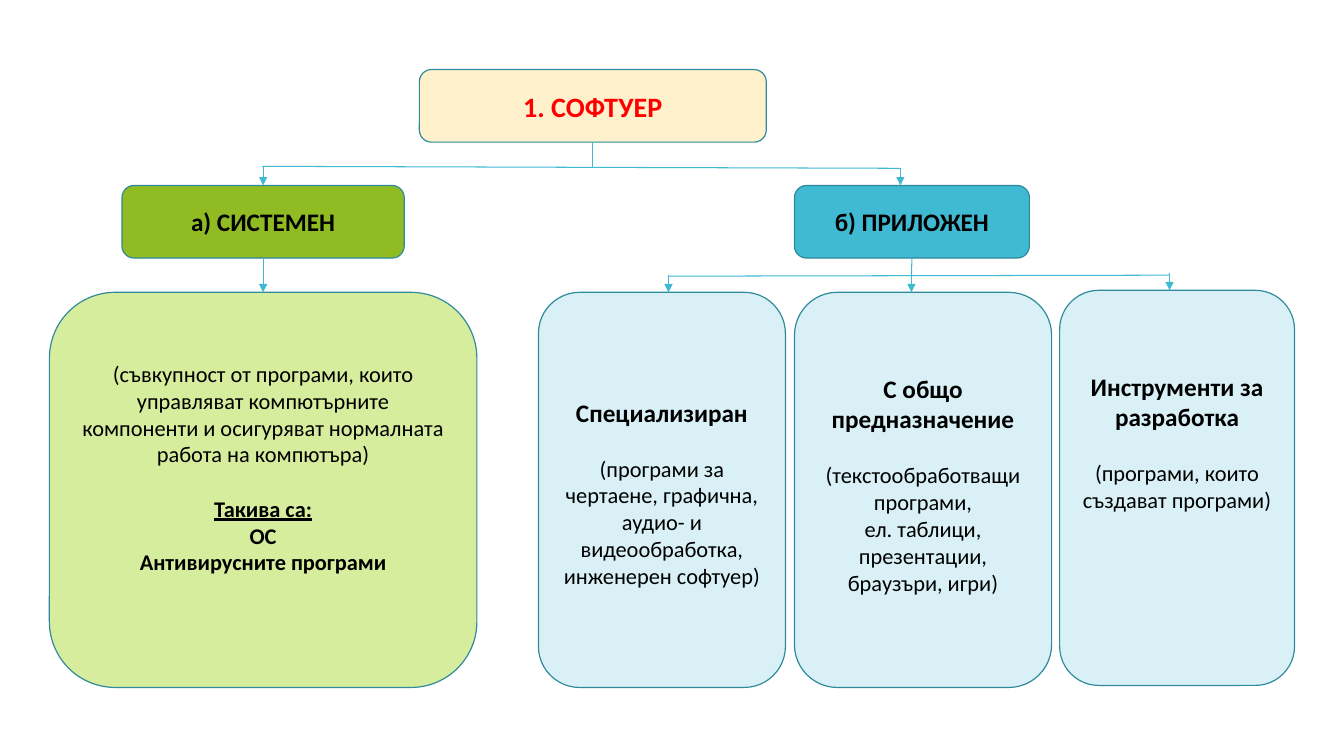
from lxml import etree
from pptx import Presentation
from pptx.dml.color import RGBColor
from pptx.enum.shapes import MSO_CONNECTOR as Line, MSO_SHAPE as Shape
from pptx.enum.text import MSO_ANCHOR as Anchor, PP_ALIGN as Align
from pptx.oxml.ns import qn
from pptx.util import Inches, Pt

FONT = "Calibri"
OUTLINE, ARROW, BLACK, RED = "2F8A9B", "40BAD2", "000000", "FF0000"
TOP, BOTTOM = 0, 2  # connection sites
BLANK_LINE = 19.5   # gap between paragraphs, points


def rgb(hex_color):
    return RGBColor.from_string(hex_color)


def add_box(slide, left, top, width, height, fill):
    box = slide.shapes.add_shape(Shape.ROUNDED_RECTANGLE, Inches(left), Inches(top),
                                 Inches(width), Inches(height))
    box.shadow.inherit = False
    box.fill.solid()
    box.fill.fore_color.rgb = rgb(fill)
    box.line.color.rgb = rgb(OUTLINE)
    box.line.width = Pt(0.85)
    box.text_frame.word_wrap = True
    return box


def write(paragraph, text, size, bold=False, color=BLACK, underline=False, gap=0):
    paragraph.text = text
    paragraph.alignment = Align.CENTER
    if gap:
        paragraph.space_before = Pt(gap)
    font = paragraph.font
    font.name, font.size, font.bold = FONT, Pt(size), bold
    font.color.rgb = rgb(color)
    if underline:
        font.underline = True


def add_heading(slide, left, top, width, fill, text, size=18, color=BLACK):
    heading = add_box(slide, left, top, width, 0.72, fill)
    heading.text_frame.vertical_anchor = Anchor.MIDDLE
    write(heading.text_frame.paragraphs[0], text, size, True, color)
    return heading


def add_panel(slide, left, top, width, fill, inset, lines):
    """A tall box whose text starts at the given inset from the top."""
    panel = add_box(slide, left, top, width, 3.92, fill)
    frame = panel.text_frame
    frame.vertical_anchor = Anchor.TOP
    frame.margin_top = Inches(inset)
    for i, (text, style) in enumerate(lines):
        paragraph = frame.add_paragraph() if i else frame.paragraphs[0]
        write(paragraph, text, **style)
    return panel


def add_line(slide, start, end, arrow=False, source=None, target=None):
    line = slide.shapes.add_connector(Line.STRAIGHT, *map(Inches, start + end))
    if source is not None:
        line.begin_connect(source, BOTTOM)
    if target is not None:
        line.end_connect(target, TOP)
    line.line.color.rgb = rgb(ARROW)
    line.line.width = Pt(0.75)
    if arrow:
        etree.SubElement(line.line._get_or_add_ln(), qn("a:tailEnd"), type="triangle")
    etree.SubElement(line._element.spPr, qn("a:effectLst"))


def main():
    prs = Presentation()
    prs.slide_width, prs.slide_height = Inches(13.33), Inches(7.5)
    slide = prs.slides.add_slide(prs.slide_layouts[6])

    # Headings
    software = add_heading(slide, 4.16, 0.69, 3.44, "FFF1CB", "1. СОФТУЕР", 20, RED)
    system = add_heading(slide, 1.21, 1.84, 2.8, "90BB23", "а) СИСТЕМЕН")
    applied = add_heading(slide, 7.88, 1.84, 2.33, "40BAD2", "б) ПРИЛОЖЕН")

    # System software
    title = dict(size=18, bold=True)
    body = dict(size=16)
    strong = dict(size=16, bold=True)
    after_gap = dict(size=16, gap=BLANK_LINE)
    system_panel = add_panel(slide, 0.49, 2.9, 4.24, "D7ED9E", 0.48, [
        ("(съвкупност от програми, които управляват компютърните компоненти "
         "и осигуряват нормалната работа на компютъра)", body),
        ("Такива са:", dict(strong, underline=True, gap=BLANK_LINE)),
        ("ОС", strong),
        ("Антивирусните програми", strong),
    ])

    # Kinds of application software
    kinds = [
        (5.34, 2.9, 2.45, 0.92, [
            ("Специализиран", title),
            ("(програми за чертаене, графична, аудио- и видеообработка, "
             "инженерен софтуер)", after_gap)]),
        (7.88, 2.9, 2.55, 0.68, [
            ("С общо предназначение", title),
            ("(текстообработващи програми,", after_gap),
            ("ел. таблици, презентации, браузъри, игри)", body)]),
        (10.51, 2.88, 2.33, 0.69, [
            ("Инструменти за разработка", title),
            ("(програми, които създават програми)", after_gap)]),
    ]
    for left, top, width, inset, lines in kinds:
        add_panel(slide, left, top, width, "D9F1F6", inset, lines)

    # Software to its two branches
    add_line(slide, (5.88, 1.41), (5.88, 1.66), source=software)
    add_line(slide, (2.6, 1.65), (8.93, 1.67))
    add_line(slide, (2.61, 1.65), (2.61, 1.84), arrow=True, target=system)
    add_line(slide, (8.93, 1.67), (8.93, 1.84), arrow=True)
    add_line(slide, (2.61, 2.56), (2.61, 2.9), arrow=True,
             source=system, target=system_panel)

    # Application software to its kinds
    add_line(slide, (9.04, 2.56), (9.04, 2.73), source=applied)
    add_line(slide, (6.63, 2.74), (11.6, 2.73))
    for x, panel_top in ((6.63, 2.9), (9.04, 2.9), (11.6, 2.88)):
        add_line(slide, (x, panel_top - 0.17), (x, panel_top), arrow=True)

    prs.save("out.pptx")


if __name__ == "__main__":
    main()
